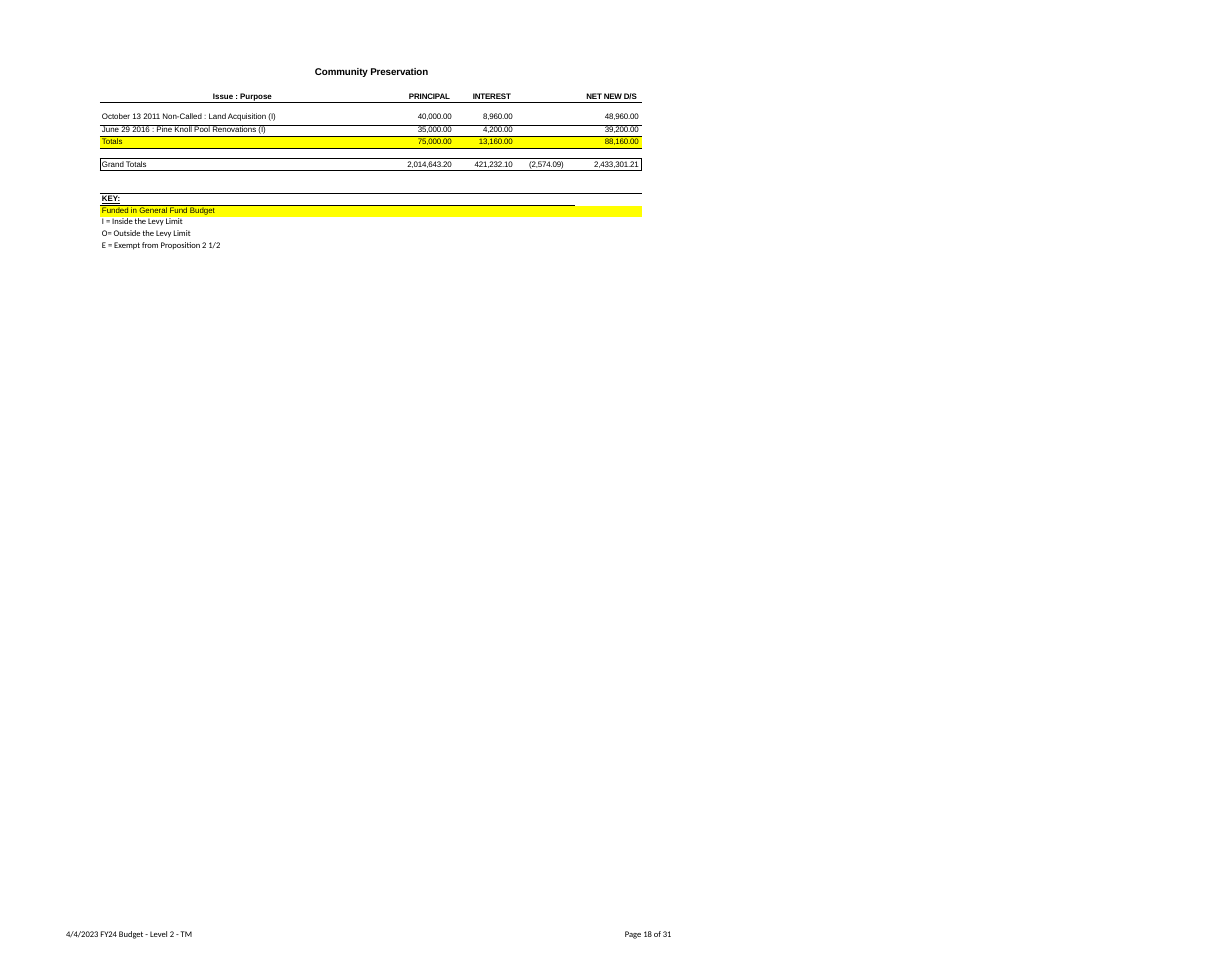
import pptx
import pptx.dml.color
import pptx.enum.text
import pptx.oxml.ns
import pptx.util
from lxml import etree

PX = 914400 // 88
BLACK, YELLOW = "000000", "FFFF00"
LEFT = pptx.enum.text.PP_ALIGN.LEFT
RIGHT = pptx.enum.text.PP_ALIGN.RIGHT
BODY = {"name": "Arial", "size": 6.5}
HEADING = {"name": "Arial", "size": 6.5, "bold": True}
KEY = {"name": "Arial", "size": 6.5, "bold": True, "underline": True}
NOTE = {"name": "Calibri", "size": 7}
TITLE = {"name": "Arial", "size": 8, "bold": True}

COLUMNS = [242, 119, 60, 54, 67]
RIGHT_INSETS = [0, 9, 8, 11, 3]
# height, top inset, text style, fill, cell texts
ROWS = [
    (10, 0, HEADING, None, ["Issue : Purpose", "PRINCIPAL", "INTEREST", "", "NET NEW D/S"]),
    (23, 10, BODY, None, ["October 13 2011 Non-Called : Land Acquisition (I)",
                          "40,000.00", "8,960.00", "", "48,960.00"]),
    (11, 0, BODY, None, ["June 29 2016 : Pine Knoll Pool Renovations (I)",
                         "35,000.00", "4,200.00", "", "39,200.00"]),
    (12, 1, BODY, YELLOW, ["Totals", "75,000.00", "13,160.00", "", "88,160.00"]),
    (11, 0, BODY, None, []),
    (12, 1, BODY, None, ["Grand Totals", "2,014,643.20", "421,232.10",
                         "(2,574.09)", "2,433,301.21"]),
    (22, 0, BODY, None, []),
    (13, 2, KEY, None, ["KEY:"]),
    (11, 0, BODY, YELLOW, ["Funded in General Fund Budget"]),
    (35, 0, NOTE, None, ["I = Inside the Levy Limit\nO= Outside the Levy Limit\n"
                         "E = Exempt from Proposition 2 1/2"]),
]
GRAND_TOTAL_ROW = 5
# row below the rule: (columns crossed, width in points)
RULES = {row: (5, 0.75) for row in range(1, 7)} | {7: (5, 0.5), 8: (4, 0.75)}


def color(value):
    return pptx.dml.color.RGBColor.from_string(value)


def write(frame, text, style, align=LEFT, spacing=0):
    """Fill a text frame, one paragraph for each line of text."""
    for index, line in enumerate(text.split("\n")):
        para = frame.paragraphs[0] if index == 0 else frame.add_paragraph()
        para.alignment = align
        if index:
            para.space_before = pptx.util.Pt(1.1)
        if not line:
            etree.SubElement(para._p, pptx.oxml.ns.qn("a:endParaRPr"), sz="600")
            continue
        span = para.add_run()
        span.text = line
        for name, value in style.items():
            setattr(span.font, name, pptx.util.Pt(value) if name == "size" else value)
        span.font.color.rgb = color(BLACK)
        if spacing:
            span.font._element.set("spc", str(spacing))


def set_margins(target, left=0, top=0, right=0):
    margins = {"left": left, "top": top, "right": right, "bottom": 0}
    for side, length in margins.items():
        setattr(target, "margin_" + side, length * PX)


def add_label(page, box, text, style, spacing=0):
    frame = page.shapes.add_textbox(*(length * PX for length in box)).text_frame
    frame.word_wrap = True
    set_margins(frame, left=1)
    write(frame, text, style, spacing=spacing)


def set_borders(cell, row, column):
    def rule(index):
        span, width = RULES.get(index, (0, 0))
        return width if column < span else 0

    boxed = row == GRAND_TOTAL_ROW
    widths = {
        "L": 0.75 if boxed and column == 0 else 0,
        "R": 0.75 if boxed and column == len(COLUMNS) - 1 else 0,
        "T": rule(row),
        "B": rule(row + 1),
    }
    qn = pptx.oxml.ns.qn
    properties = cell._tc.get_or_add_tcPr()
    for side, width in widths.items():
        line = etree.SubElement(properties, qn("a:ln" + side), w=str(int(width * 12700)))
        if width:
            fill = etree.SubElement(line, qn("a:solidFill"))
            etree.SubElement(fill, qn("a:srgbClr"), val=BLACK)
        else:
            etree.SubElement(line, qn("a:noFill"))


def add_debt_table(page, left, top):
    heights = [row[0] for row in ROWS]
    table = page.shapes.add_table(
        len(ROWS), len(COLUMNS), left * PX, top * PX,
        sum(COLUMNS) * PX, sum(heights) * PX).table
    table.first_row = table.horz_banding = False
    for column, width in enumerate(COLUMNS):
        table.columns[column].width = width * PX
    for row, (height, inset, style, fill, texts) in enumerate(ROWS):
        table.rows[row].height = height * PX
        header = row == 0
        for column, right in enumerate(RIGHT_INSETS):
            cell = table.cell(row, column)
            first = column == 0
            indent = (113 if header else 2) if first else 0
            set_margins(cell, indent, inset, right + (2 if header and not first else 0))
            set_borders(cell, row, column)
            if fill:
                cell.fill.solid()
                cell.fill.fore_color.rgb = color(fill)
            else:
                cell.fill.background()
            text = texts[column] if column < len(texts) else ""
            write(cell.text_frame, text, style, LEFT if first else RIGHT,
                  0 if first else -10)


def add_footer(page, top):
    add_label(page, (65, top, 140, 12), "4/4/2023 FY24 Budget ‐ Level 2 ‐ TM", NOTE)
    add_label(page, (624, top, 60, 12), "Page 18 of 31", NOTE)


def main():
    deck = pptx.Presentation()
    deck.slide_width = pptx.util.Inches(14)
    deck.slide_height = pptx.util.Inches(11)
    page = deck.slides.add_slide(deck.slide_layouts[6])
    add_label(page, (314, 66, 120, 14), "Community Preservation", TITLE, -10)
    add_debt_table(page, 100, 92)
    add_footer(page, 929)
    deck.save("out.pptx")


if __name__ == "__main__":
    main()
